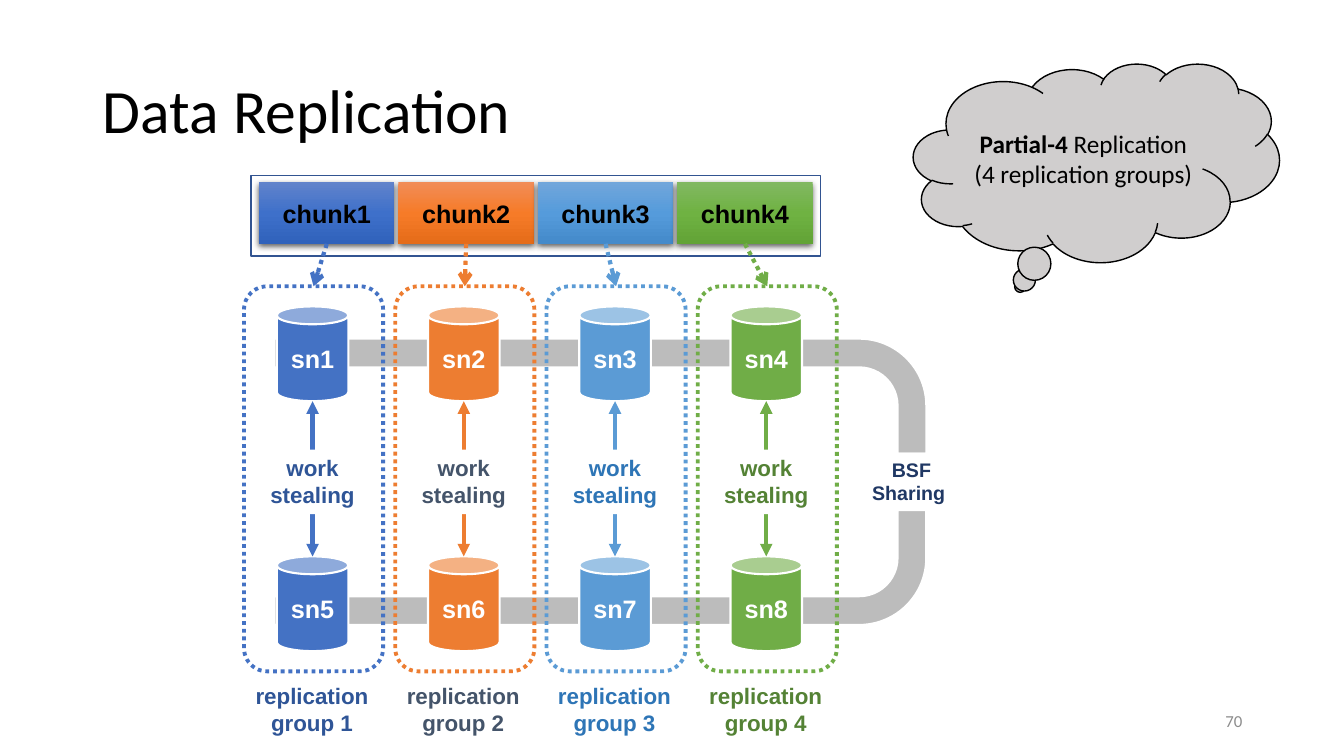
from collections import namedtuple

from pptx import Presentation
from pptx.dml.color import RGBColor
from pptx.enum.dml import MSO_LINE
from pptx.enum.shapes import MSO_CONNECTOR, MSO_SHAPE as SHAPE
from pptx.enum.text import MSO_ANCHOR as ANCHOR, PP_ALIGN as ALIGN
from pptx.oxml import parse_xml
from pptx.oxml.ns import nsdecls, qn
from pptx.util import Inches, Pt

Box = namedtuple("Box", "x y w h")
Theme = namedtuple("Theme", "base dark stops")

BLACK = RGBColor(0x00, 0x00, 0x00)
WHITE = RGBColor(0xFF, 0xFF, 0xFF)
GRAY = RGBColor(0x8C, 0x8C, 0x8C)
RING = RGBColor(0xA5, 0xA5, 0xA5)
CLOUD = RGBColor(0xD0, 0xCE, 0xCE)
NAVY = RGBColor(0x20, 0x38, 0x64)
FRAME = RGBColor(0x32, 0x54, 0x91)

# One theme per replication group: base, dark text, chunk gradient
THEMES = [
    Theme(RGBColor(0x44, 0x72, 0xC4), RGBColor(0x2F, 0x55, 0x97),
          ("6183CB", "3E70CA", "3062BB")),
    Theme(RGBColor(0xED, 0x7D, 0x31), RGBColor(0x44, 0x54, 0x6A),
          ("F18C57", "F67B28", "E56C19")),
    Theme(RGBColor(0x5B, 0x9B, 0xD5), RGBColor(0x2E, 0x75, 0xB6),
          ("71A6DB", "559BDB", "448ACA")),
    Theme(RGBColor(0x70, 0xAD, 0x47), RGBColor(0x54, 0x82, 0x35),
          ("81B861", "6FB242", "62A336")),
]
GROUPS = len(THEMES)
PITCH = 1.5  # distance between group columns

prs = Presentation()
prs.slide_width, prs.slide_height = Inches(13.33), Inches(7.5)
slide = prs.slides.add_slide(prs.slide_layouts[5])
shapes = slide.shapes


def write(sp, lines, anchor=ANCHOR.MIDDLE, align=ALIGN.CENTER, **font):
    """Each line is a list of (text, bold) runs."""
    tf = sp.text_frame
    tf.word_wrap, tf.vertical_anchor = True, anchor
    for i, runs in enumerate(lines):
        p = tf.paragraphs[0] if i == 0 else tf.add_paragraph()
        p.alignment = align
        for text, bold in runs:
            r = p.add_run()
            r.text = text
            fmt = {"name": "Arial", "size": Pt(18), "bold": bold, **font}
            r.font.color.rgb = fmt.pop("color", BLACK)
            for key, value in fmt.items():
                setattr(r.font, key, value)


def add_shape(kind, box, fill=None, line=None, width=1.0, dash=None):
    sp = shapes.add_shape(kind, *map(Inches, box))
    sp.shadow.inherit = False
    if fill is None:
        sp.fill.background()
    else:
        sp.fill.solid()
        sp.fill.fore_color.rgb = fill
    if line is None:
        sp.line.fill.background()
    else:
        sp.line.color.rgb, sp.line.width = line, Pt(width)
        if dash:
            sp.line.dash_style = dash
    return sp


def add_arrow(start, end, color, dash=None, **ends):
    c = shapes.add_connector(MSO_CONNECTOR.STRAIGHT, *map(Inches, start + end))
    c.line.color.rgb, c.line.width = color, Pt(3)
    if dash:
        c.line.dash_style = dash
    spPr = c.element.spPr
    for tag, kind in ends.items():
        spPr.find(qn("a:ln")).append(
            parse_xml(f'<a:{tag} {nsdecls("a")} type="{kind}"/>'))
    spPr.append(parse_xml(f'<a:effectLst {nsdecls("a")}/>'))
    return c


def add_title(box):
    sp = shapes.title
    sp.left, sp.top, sp.width, sp.height = map(Inches, box)
    write(sp, [[("Data Replication", False)]], align=ALIGN.LEFT,
          name="Calibri", size=Pt(44))
    sp.text_frame.paragraphs[0].line_spacing = 0.9


def add_page_number(box):
    sp = shapes.add_textbox(*map(Inches, box))
    write(sp, [[("70", False)]], align=ALIGN.RIGHT,
          name="Calibri", size=Pt(12), color=GRAY)


def add_ring(box, band):
    """Two mirrored bent bands, turned a quarter, close the ring at the right."""
    for y, mirrored in ((box.y + box.h - band, True), (box.y, False)):
        shift = (box.w - band) / 2
        sp = add_shape(SHAPE.BENT_ARROW,
                       (box.x + shift, y - shift, band, box.w), RING, WHITE, 1.5)
        for i, value in enumerate((0.25, 0.25, 0, 0.584)):
            sp.adjustments[i] = value
        sp.rotation = 90
        if mirrored:
            sp.element.spPr.find(qn("a:xfrm")).set("flipH", "1")
        sp.element.spPr.find(qn("a:solidFill"))[0].append(
            parse_xml(f'<a:alpha {nsdecls("a")} val="74000"/>'))


def add_chunks(box):
    add_shape(SHAPE.RECTANGLE, box, line=FRAME)
    pad, gap = 0.08, 0.04
    w = (box.w - 2 * pad - (GROUPS - 1) * gap) / GROUPS
    chunks = []
    for i, theme in enumerate(THEMES):
        sp = add_shape(SHAPE.RECTANGLE, (box.x + pad + i * (w + gap),
                                         box.y + 0.07, w, 0.61), theme.base)
        # Vertical gradient and soft shadow
        spPr = sp.element.spPr
        stops = "".join(
            f'<a:gs pos="{n * 50000}"><a:srgbClr val="{c}"/></a:gs>'
            for n, c in enumerate(theme.stops))
        spPr.replace(spPr.find(qn("a:solidFill")), parse_xml(
            f'<a:gradFill {nsdecls("a")} rotWithShape="1"><a:gsLst>{stops}'
            '</a:gsLst><a:lin ang="5400000" scaled="0"/></a:gradFill>'))
        spPr.find(qn("a:effectLst")).append(parse_xml(
            f'<a:outerShdw {nsdecls("a")} blurRad="57150" dist="19050" '
            'dir="5400000" algn="ctr" rotWithShape="0"><a:srgbClr val="000000">'
            '<a:alpha val="63000"/></a:srgbClr></a:outerShdw>'))
        write(sp, [[(f"chunk{i + 1}", True)]])
        chunks.append(sp)
    return chunks


def add_group(box, number, theme):
    mid = box.x + box.w / 2 - 0.01
    can_w, can_h, label_w = 0.71, 0.94, 1.24
    upper, lower = box.y + 0.2, box.y + 2.68
    outline = add_shape(SHAPE.ROUNDED_RECTANGLE, box, line=theme.base,
                        width=2.75, dash=MSO_LINE.ROUND_DOT)
    # Storage nodes
    for y, node in ((upper, number), (lower, number + GROUPS)):
        sp = add_shape(SHAPE.CAN, (mid - can_w / 2, y, can_w, can_h),
                       theme.base, WHITE, 1.5)
        write(sp, [[(f"sn{node}", True)]], color=WHITE)
    # Work stealing between the nodes
    add_arrow((mid, upper + can_h), (mid, lower), theme.base,
              headEnd="triangle", tailEnd="triangle")
    label = add_shape(SHAPE.RECTANGLE,
                      (mid - label_w / 2, box.y + 1.62, label_w, 0.64), WHITE)
    caption = shapes.add_textbox(
        *map(Inches, (box.x - 0.01, box.y + box.h + 0.06, 1.37, 0.64)))
    for sp, text in ((label, "work stealing"),
                     (caption, f"replication group {number}")):
        write(sp, [[(text, True)]], ANCHOR.TOP, size=Pt(16), color=theme.dark)
    return outline


def add_sharing_label(box):
    sp = add_shape(SHAPE.RECTANGLE, box, WHITE)
    write(sp, [[("BSF", True)], [("Sharing ", True)]], ANCHOR.TOP,
          size=Pt(14), color=NAVY)


def add_cloud(box):
    sp = add_shape(SHAPE.CLOUD_CALLOUT, box, CLOUD, BLACK)
    write(sp, [[("Partial-4 ", True), ("Replication", False)],
               [("(4 replication groups)", False)]], name="Calibri")


def main():
    add_title(Box(0.92, 0.4, 11.5, 1.45))
    add_page_number(Box(9.42, 6.95, 3, 0.4))
    add_ring(Box(2.72, 3.36, 6.61, 2.84), band=1.14)
    chunks = add_chunks(Box(2.49, 1.74, 5.65, 0.8))
    for i, (chunk, theme) in enumerate(zip(chunks, THEMES)):
        outline = add_group(Box(2.42 + i * PITCH, 2.84, 1.38, 3.82), i + 1, theme)
        link = add_arrow((0, 0), (1, 1), theme.base, MSO_LINE.ROUND_DOT,
                         tailEnd="arrow")
        link.begin_connect(chunk, 2)
        link.end_connect(outline, 0)
    add_sharing_label(Box(8.35, 4.49, 1.38, 0.57))
    add_cloud(Box(9.06, 0.63, 3.63, 1.97))
    prs.save("out.pptx")


if __name__ == "__main__":
    main()
